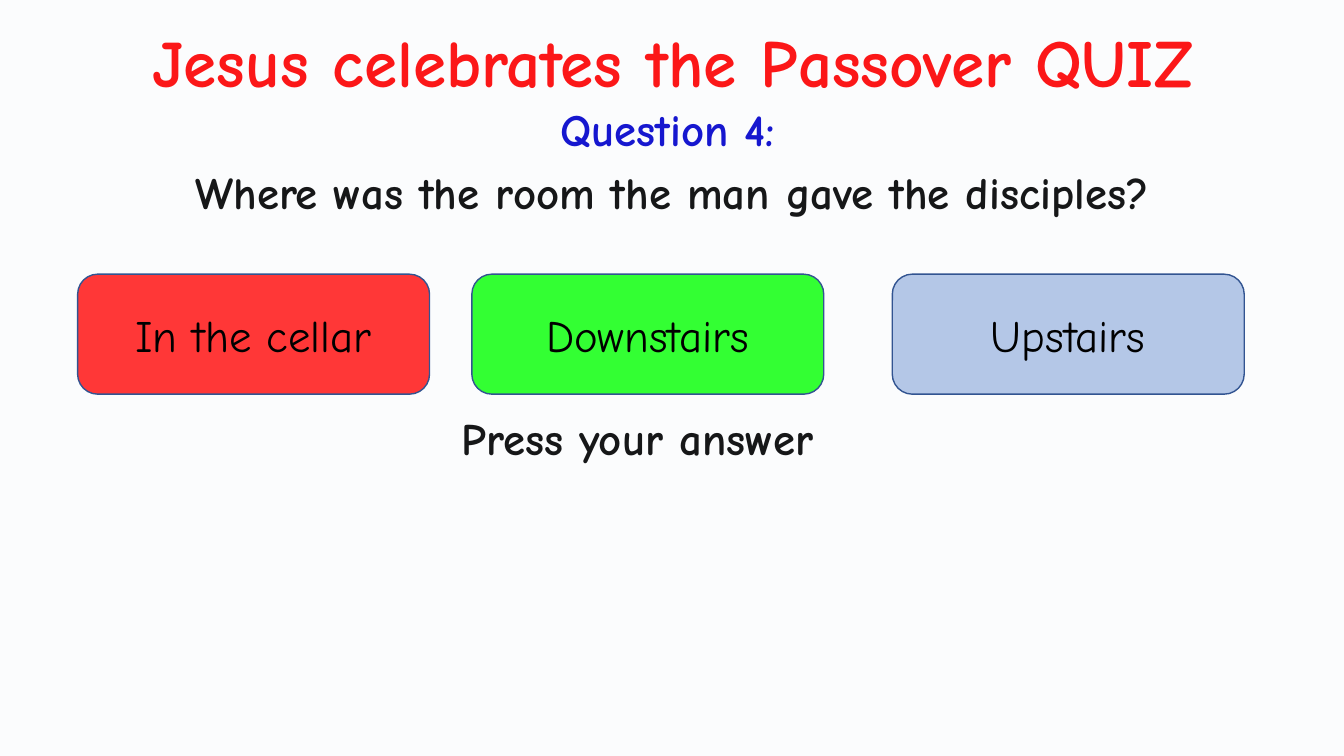
import pptx
import pptx.util
import pptx.dml.color
import pptx.enum.shapes
import pptx.enum.text
import pptx.oxml
import pptx.oxml.ns
from dataclasses import dataclass

Inches = pptx.util.Inches
Pt = pptx.util.Pt
Align = pptx.enum.text.PP_ALIGN
Shape = pptx.enum.shapes.MSO_SHAPE
Color = pptx.dml.color.RGBColor.from_string


@dataclass
class Theme:
    font: str = "Comic Neue"
    title: str = "FF0000"
    label: str = "0000CC"
    ink: str = "000000"
    edge: str = "325491"
    veil: str = "DAE3F3"
    red: str = "FF3737"
    green: str = "33FF33"
    blue: str = "B4C7E7"
    big: int = 48
    body: int = 32


theme = Theme()


def write(frame, text, size, color, bold=True, align=Align.CENTER):
    """Fill the first paragraph with one run."""
    para = frame.paragraphs[0]
    para.alignment = align
    run = para.add_run()
    run.text = text
    run.font.name = theme.font
    run.font.size = Pt(size)
    run.font.bold = bold
    run.font.color.rgb = Color(color)
    return para


def block(kind, left, top, width, height, fill):
    """Add a filled shape with the thin blue edge."""
    shape = slide.shapes.add_shape(
        kind, Inches(left), Inches(top), Inches(width), Inches(height))
    shape.shadow.inherit = False
    shape.fill.solid()
    shape.fill.fore_color.rgb = Color(fill)
    shape.line.color.rgb = Color(theme.edge)
    shape.line.width = Pt(1)
    return shape


deck = pptx.Presentation()
deck.slide_width = Inches(13.33)
deck.slide_height = Inches(7.5)
slide = deck.slides.add_slide(deck.slide_layouts[6])

# Headings: text, box, size, colour, alignment, line spacing, space before
heads = [
    ("Jesus celebrates the Passover QUIZ", (0.48, 0.15, 12.38, 0.91),
     theme.big, theme.title, Align.CENTER, None, 0),
    ("Where was the room the man gave the disciples?", (0.37, 1.6, 12.6, 1.19),
     theme.body, theme.ink, Align.CENTER, Pt(37), 10),
    ("Press your answer", (4.48, 4.09, 6.73, 0.72),
     theme.body, theme.ink, Align.LEFT, 0.9, 7.5),
    ("Question 4:", (4.42, 0.96, 4.41, 0.64),
     theme.body, theme.label, Align.CENTER, None, 0),
]
for text, spot, size, color, align, pitch, gap in heads:
    box = slide.shapes.add_textbox(*[Inches(n) for n in spot])
    box.text_frame.word_wrap = True
    para = write(box.text_frame, text, size, color, align=align)
    para.line_spacing = pitch
    para.space_before = Pt(gap)

# Pale veil over the whole slide
veil = block(Shape.RECTANGLE, -0.67, -0.79, 14.19, 8.73, theme.veil)
tint = veil.fill._xPr.find(".//" + pptx.oxml.ns.qn("a:srgbClr"))
alpha = pptx.oxml.parse_xml(
    '<a:alpha %s val="10000"/>' % pptx.oxml.ns.nsdecls("a"))
tint.append(alpha)

# Answer buttons
answers = [
    ("In the cellar", 0.77, theme.red),
    ("Downstairs", 4.68, theme.green),
    ("Upstairs", 8.85, theme.blue),
]
for text, left, fill in answers:
    button = block(Shape.ROUNDED_RECTANGLE, left, 2.72, 3.49, 1.19, fill)
    button.text_frame.vertical_anchor = pptx.enum.text.MSO_ANCHOR.MIDDLE
    write(button.text_frame, text, theme.body, theme.ink, bold=False)

deck.save("out.pptx")
